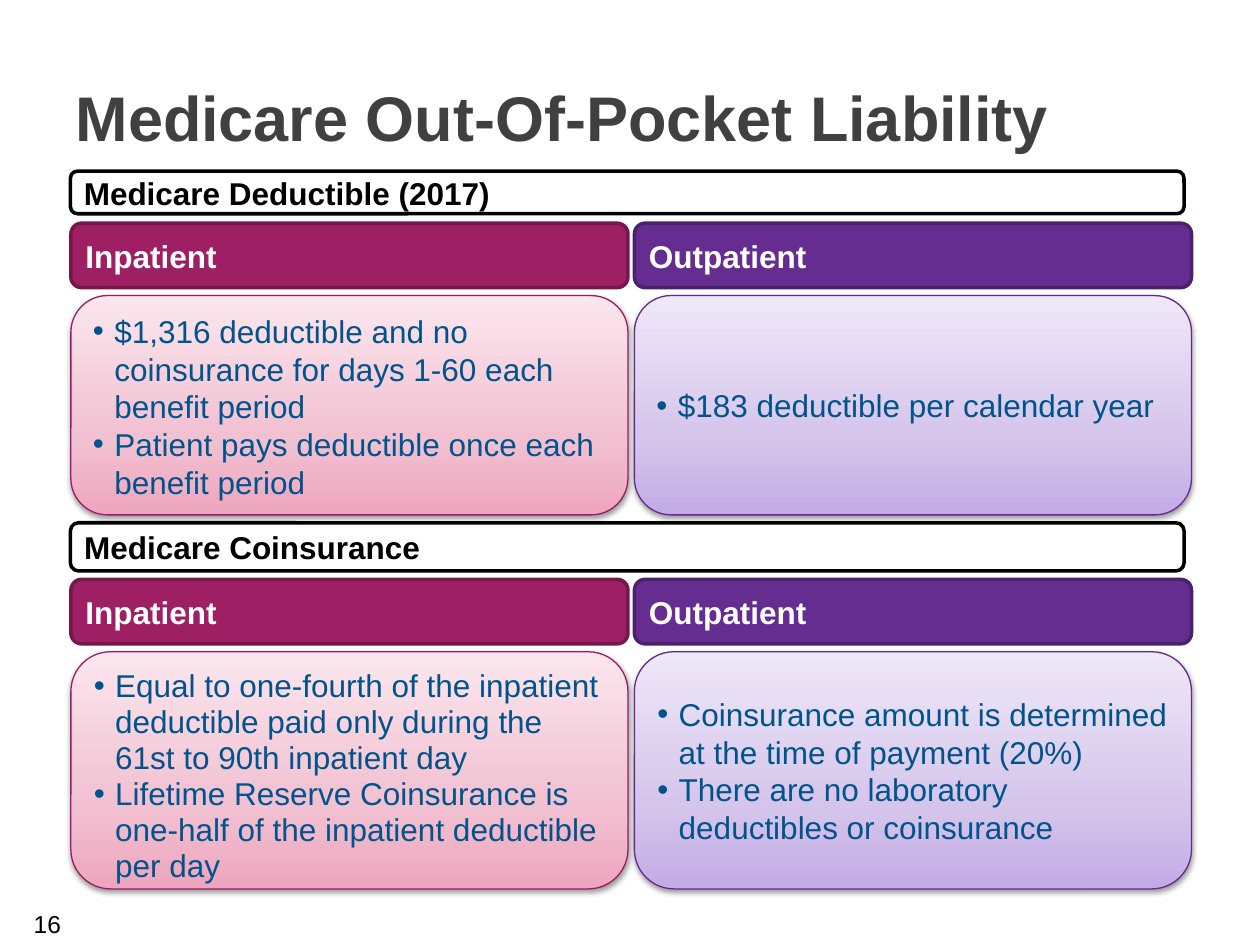
import copy
from dataclasses import dataclass

import pptx
import pptx.dml.color
import pptx.enum.shapes
import pptx.enum.text
import pptx.oxml
import pptx.oxml.ns
import pptx.util

Cm = pptx.util.Cm
Pt = pptx.util.Pt
qn = pptx.oxml.ns.qn
ALIGN = pptx.enum.text.PP_ALIGN
ANCHOR = pptx.enum.text.MSO_ANCHOR
NAMESPACE = pptx.oxml.ns.nsdecls("a")


def rgb(value):
    return pptx.dml.color.RGBColor.from_string(value)


@dataclass(frozen=True)
class Column:
    label: str
    left: float
    header_fill: str
    header_line: str
    body_line: str
    gradient: tuple


@dataclass(frozen=True)
class Theme:
    font: str = "Arial"
    title_size: int = 36
    text_size: int = 18
    number_size: int = 14
    title_color: str = "404040"
    body_color: str = "00538B"
    black: str = "000000"
    white: str = "FFFFFF"
    heavy_line: float = 2
    thin_line: float = 0.75
    stops: tuple = (0, 0.35, 1)


INPATIENT = Column("Inpatient", 1.43, "9E1F63", "751749", "9E1B61",
                   ("EEA5BE", "F2C1D1", "FBE6ED"))
OUTPATIENT = Column("Outpatient", 12.79, "662D91", "4B216B", "642A90",
                    ("C3ABE5", "D5C5EB", "EFE8F8"))
COLUMN_WIDTH = 11.23
HEADER_HEIGHT = 1.3
HEADER_TO_BODY = 1.46


class Page:
    def __init__(self, deck, theme):
        self.theme = theme
        self.slide = deck.slides.add_slide(deck.slide_layouts[5])

    def style(self, para, size, color, bold=False):
        for span in para.runs:
            span.font.name = self.theme.font
            span.font.size = Pt(size)
            span.font.bold = bold
            span.font.color.rgb = rgb(color)

    def indent(self, para, amount):
        properties = para._p.get_or_add_pPr()
        properties.set("marL", str(Cm(amount)))
        properties.set("indent", str(-Cm(amount)))
        return properties

    def title(self, text):
        box = self.slide.shapes.title
        box.left, box.top, box.width, box.height = Cm(1.27), Cm(0.76), Cm(22.86), Cm(3.18)
        frame = box.text_frame
        frame.text = text
        frame.word_wrap = True
        frame.vertical_anchor = ANCHOR.MIDDLE
        frame.paragraphs[0].alignment = ALIGN.LEFT
        self.style(frame.paragraphs[0], self.theme.title_size, self.theme.title_color, True)

    def number(self, text):
        box = self.slide.shapes.add_textbox(Cm(0.43), Cm(18.21), Cm(5.92), Cm(0.84))
        frame = box.text_frame
        frame.text = text
        frame.word_wrap = True
        frame.vertical_anchor = ANCHOR.MIDDLE
        self.style(frame.paragraphs[0], self.theme.number_size, self.theme.black)

    def panel(self, left, top, width, height, line, line_width):
        box = self.slide.shapes.add_shape(
            pptx.enum.shapes.MSO_SHAPE.ROUNDED_RECTANGLE,
            Cm(left), Cm(top), Cm(width), Cm(height))
        box.shadow.inherit = False
        box.line.color.rgb = rgb(line)
        box.line.width = Pt(line_width)
        frame = box.text_frame
        frame.word_wrap = True
        frame.vertical_anchor = ANCHOR.MIDDLE
        frame.margin_left = frame.margin_right = Cm(0.23)
        frame.margin_top = frame.margin_bottom = Cm(0.11)
        return box

    def heading(self, text, left, top, width, height, fill, line, color):
        box = self.panel(left, top, width, height, line, self.theme.heavy_line)
        box.fill.solid()
        box.fill.fore_color.rgb = rgb(fill)
        box.text_frame.text = text
        para = box.text_frame.paragraphs[0]
        para.alignment = ALIGN.LEFT
        self.indent(para, 0.56)
        self.style(para, self.theme.text_size, color, True)

    def banner(self, text, top, height):
        self.heading(text, 1.42, top, 22.45, height,
                     self.theme.white, self.theme.black, self.theme.black)

    def gradient(self, box, colors):
        box.fill.gradient()
        box.fill.gradient_angle = 90
        stop_list = box._element.spPr.find(".//" + qn("a:gsLst"))
        stop_list.append(copy.deepcopy(stop_list[0]))
        for stop, position, color in zip(box.fill.gradient_stops, self.theme.stops, colors):
            stop.position = position
            stop.color.rgb = rgb(color)

    def shadow(self, box):
        effects = box._element.spPr.find(qn("a:effectLst"))
        effects.append(pptx.oxml.parse_xml(
            f'<a:outerShdw {NAMESPACE} blurRad="{Pt(3.1)}" dist="{Pt(1.6)}" dir="5400000" '
            f'rotWithShape="0"><a:srgbClr val="{self.theme.black}">'
            '<a:alpha val="38000"/></a:srgbClr></a:outerShdw>'))

    def bullet(self, para):
        properties = self.indent(para, 0.43)
        for tag in (f'<a:buClr {NAMESPACE}><a:srgbClr val="{self.theme.body_color}"/></a:buClr>',
                    f'<a:buFont {NAMESPACE} typeface="{self.theme.font}"/>',
                    f'<a:buChar {NAMESPACE} char="•"/>'):
            properties.append(pptx.oxml.parse_xml(tag))

    def body(self, column, top, height, items, anchor, spacing):
        box = self.panel(column.left, top, COLUMN_WIDTH, height,
                         column.body_line, self.theme.thin_line)
        self.gradient(box, column.gradient)
        self.shadow(box)
        frame = box.text_frame
        frame.vertical_anchor = anchor
        frame.text = "\n".join(items)
        for para in frame.paragraphs:
            para.level = 1
            para.alignment = ALIGN.LEFT
            self.bullet(para)
            if spacing:
                para.line_spacing = spacing
            self.style(para, self.theme.text_size, self.theme.body_color)

    def column(self, column, top, height, items, anchor=ANCHOR.MIDDLE, spacing=None):
        self.heading(column.label, column.left, top, COLUMN_WIDTH, HEADER_HEIGHT,
                     column.header_fill, column.header_line, self.theme.white)
        self.body(column, top + HEADER_TO_BODY, height, items, anchor, spacing)


def main():
    deck = pptx.Presentation()
    deck.slide_width, deck.slide_height = Cm(25.4), Cm(19.05)
    page = Page(deck, Theme())
    page.title("Medicare Out-Of-Pocket Liability")
    page.banner("Medicare Deductible (2017)", 3.45, 0.86)
    page.column(INPATIENT, 4.5, 4.42, [
        "$1,316 deductible and no coinsurance for days 1-60 each benefit period",
        "Patient pays deductible once each benefit period"], ANCHOR.TOP)
    page.column(OUTPATIENT, 4.5, 4.42, ["$183 deductible per calendar year"])
    page.banner("Medicare Coinsurance", 10.54, 0.97)
    page.column(INPATIENT, 11.68, 4.78, [
        "Equal to one-fourth of the inpatient deductible paid only during the "
        "61st to 90th inpatient day",
        "Lifetime Reserve Coinsurance is one-half of the inpatient deductible per day"],
        ANCHOR.TOP, 0.95)
    page.column(OUTPATIENT, 11.68, 4.78, [
        "Coinsurance amount is determined at the time of payment (20%)",
        "There are no laboratory deductibles or coinsurance"])
    page.number("16")
    deck.save("out.pptx")


if __name__ == "__main__":
    main()
